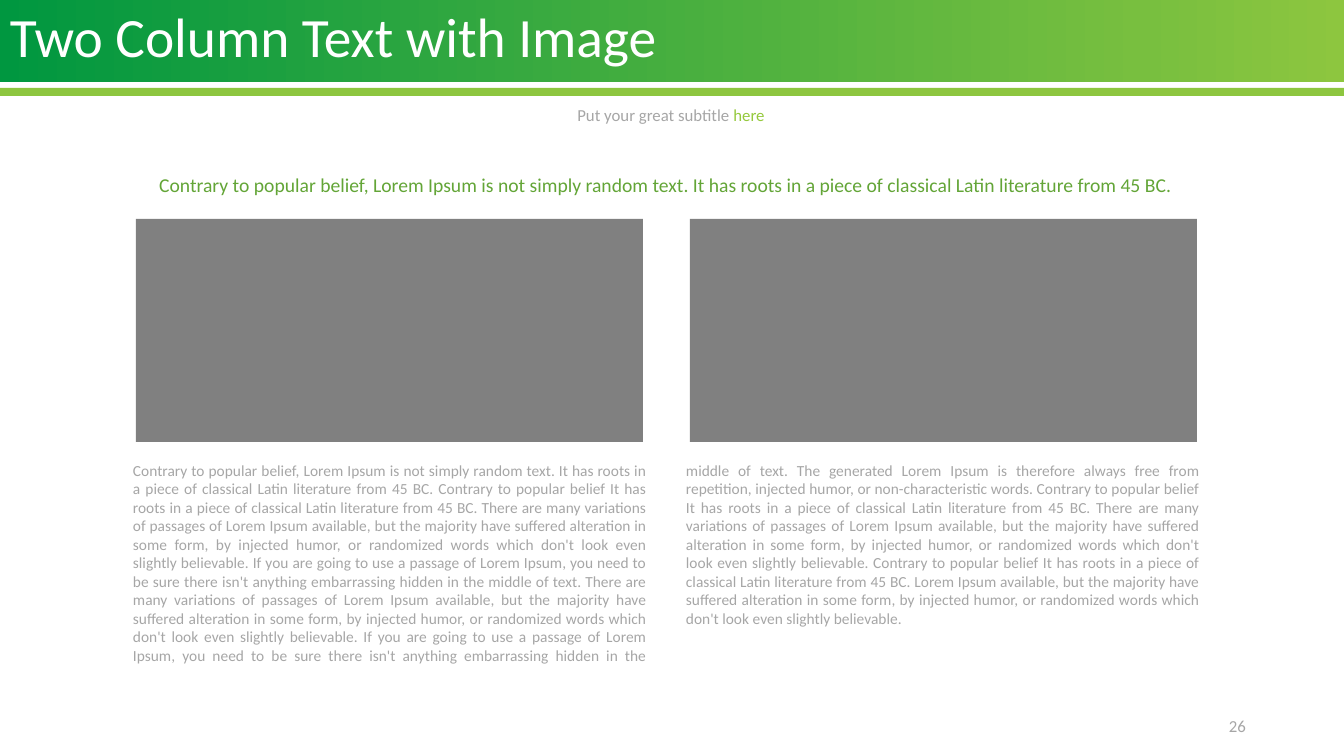
from copy import deepcopy

from pptx import Presentation
from pptx.dml.color import RGBColor
from pptx.enum.shapes import MSO_SHAPE as Shape
from pptx.enum.text import MSO_ANCHOR as Anchor, MSO_AUTO_SIZE as AutoSize, PP_ALIGN as Align
from pptx.util import Pt

EMU_PER_PX = 12192000 / 1344
COLORS = {
    "white": "FFFFFF", "text": "A6A6A6", "lead": "63A537", "accent": "95C93D",
    "image": "808080", "dark": "009740", "middle": "78BF3F", "light": "8DC63F",
}

LEAD = ("Contrary to popular belief, Lorem Ipsum is not simply random text. "
        "It has roots in a piece of classical Latin literature from 45 BC.")
ROOTS = ("Contrary to popular belief It has roots in a piece of classical "
         "Latin literature from 45 BC.")
AVAILABLE = ("Lorem Ipsum available, but the majority have suffered alteration in "
             "some form, by injected humor, or randomized words which don't look "
             "even slightly believable.")
VARIATIONS = "There are many variations of passages of " + AVAILABLE
PASSAGE = ("If you are going to use a passage of Lorem Ipsum, you need to be sure "
           "there isn't anything embarrassing hidden in the middle of text.")
GENERATED = ("The generated Lorem Ipsum is therefore always free from repetition, "
             "injected humor, or non-characteristic words.")
BODY = " ".join([LEAD, ROOTS, VARIATIONS, PASSAGE, VARIATIONS, PASSAGE,
                 GENERATED, ROOTS, VARIATIONS, ROOTS, AVAILABLE])


def px(length):
    return round(length * EMU_PER_PX)


def rgb(name):
    return RGBColor.from_string(COLORS[name])


def add_run(paragraph, text, *, size, color, font="Calibri"):
    run = paragraph.add_run()
    run.text = text
    run.font.name = font
    run.font.size = Pt(size)
    run.font.color.rgb = rgb(color)


class SlideBuilder:
    def __init__(self, presentation):
        self.slide = presentation.slides.add_slide(presentation.slide_layouts[6])

    def rectangle(self, *box, color=None):
        shape = self.slide.shapes.add_shape(Shape.RECTANGLE, *map(px, box))
        shape.shadow.inherit = False
        shape.line.fill.background()
        if color:
            shape.fill.solid()
            shape.fill.fore_color.rgb = rgb(color)
        return shape

    def gradient_bar(self, *box, stops):
        """Draw a left-to-right gradient from (position, colour name) pairs."""
        fill = self.rectangle(*box).fill
        fill.gradient()
        fill.gradient_angle = 0
        stop_list = fill.gradient_stops[0]._gs.getparent()
        while len(stop_list) < len(stops):
            stop_list.append(deepcopy(stop_list[0]))
        for stop, (position, color) in zip(fill.gradient_stops, stops):
            stop.position = position
            stop.color.rgb = rgb(color)

    def text(self, *box, runs, size, align=Align.LEFT, anchor=Anchor.TOP, wrap=True,
             grow=True, insets=(10, 5, 10, 5), line_spacing=None, columns=1, gap=0):
        """Add one paragraph made of (text, colour name) runs."""
        frame = self.slide.shapes.add_textbox(*map(px, box)).text_frame
        frame.word_wrap = wrap
        frame.auto_size = AutoSize.SHAPE_TO_FIT_TEXT if grow else AutoSize.NONE
        frame.vertical_anchor = anchor
        (frame.margin_left, frame.margin_top,
         frame.margin_right, frame.margin_bottom) = map(px, insets)
        if columns > 1:
            properties = frame._txBody.bodyPr
            properties.set("numCol", str(columns))
            properties.set("spcCol", str(px(gap)))
        paragraph = frame.paragraphs[0]
        paragraph.alignment = align
        paragraph.line_spacing = line_spacing
        for text, color in runs:
            add_run(paragraph, text, size=size, color=color)


def main():
    presentation = Presentation()
    presentation.slide_width, presentation.slide_height = px(1344), px(756)
    builder = SlideBuilder(presentation)

    builder.gradient_bar(0, -10, 1344, 92,
                         stops=[(0, "dark"), (0.85, "middle"), (1, "light")])
    builder.rectangle(0, 88, 1344, 8, color="light")
    builder.text(0, 4, 1258, 72, runs=[("Two Column Text with Image", "white")],
                 size=39.6, anchor=Anchor.MIDDLE, grow=False, line_spacing=0.9)
    builder.text(565, 100, 212, 30, size=12, align=Align.CENTER, wrap=False,
                 runs=[("Put your great subtitle ", "text"), ("here", "accent")])

    wide_insets = (10, 5, 16, 4)
    builder.text(74, 168, 1190, 33, runs=[(LEAD, "lead")], size=14,
                 align=Align.CENTER, insets=wide_insets)
    for column in range(2):
        builder.rectangle(136 + 554 * column, 219, 507, 223, color="image")
    builder.text(123, 456, 1093, 215, runs=[(BODY, "text")], size=11,
                 align=Align.JUSTIFY, insets=wide_insets, columns=2, gap=39)
    builder.text(1111, 711, 145, 30, runs=[("26", "text")], size=12, align=Align.RIGHT)

    presentation.save("out.pptx")


if __name__ == "__main__":
    main()
